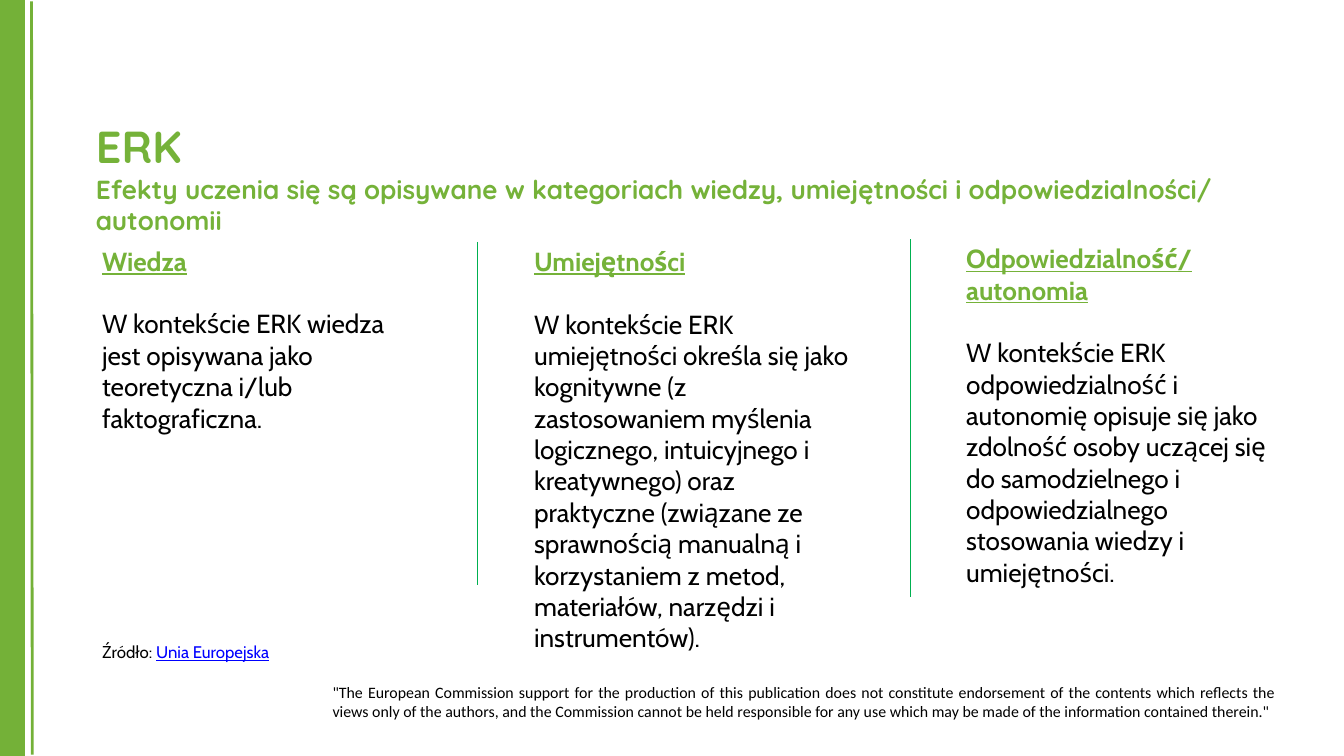
from lxml.etree import SubElement
from pptx import Presentation
from pptx.dml.color import RGBColor
from pptx.enum.shapes import MSO_CONNECTOR as Connector, MSO_SHAPE as Shape
from pptx.enum.text import PP_ALIGN as Align
from pptx.oxml.ns import qn
from pptx.util import Inches, Pt

BAR_GREEN = RGBColor(0x74, 0xB1, 0x38)
TITLE_GREEN = RGBColor(0x75, 0xB2, 0x39)
DIVIDER_GREEN = RGBColor(0x00, 0xB0, 0x50)
LINK_BLUE = RGBColor(0x00, 0x00, 0xFF)
BLACK = RGBColor(0x00, 0x00, 0x00)

WIDTH, HEIGHT = 20, 11.25

# Column grid, in inches
FIRST_LEFT, PITCH, COLUMN_WIDTH = 1.42, 6.43, 4.96
DIVIDER_GAP = 0.74
TITLE_LEFT = 1.33
BLANK_LINE = Pt(33.5)

# Text formats
TITLE = {"name": "Quicksand", "size": Pt(48), "bold": True, "color": TITLE_GREEN}
SUBTITLE = {**TITLE, "size": Pt(28)}
BODY = {"name": "Cabin", "size": Pt(28), "color": BLACK}
HEADING = {**BODY, "bold": True, "underline": True, "color": TITLE_GREEN}
SOURCE = {**BODY, "size": Pt(18)}
LINK = {**SOURCE, "underline": True, "color": LINK_BLUE}
DISCLAIMER = {"name": "Calibri", "size": Pt(17), "color": BLACK}

# Heading, text, top, text height and divider height of each column
COLUMNS = [
    ("Wiedza",
     "W kontekście ERK wiedza jest opisywana jako teoretyczna i/lub faktograficzna.",
     3.6, 2.46, None),
    ("Umiejętności",
     "W kontekście ERK umiejętności określa się jako kognitywne (z zastosowaniem "
     "myślenia logicznego, intuicyjnego i kreatywnego) oraz praktyczne (związane ze "
     "sprawnością manualną i korzystaniem z metod, materiałów, narzędzi i instrumentów).",
     3.6, 5.28, 5.11),
    ("Odpowiedzialność/ autonomia",
     "W kontekście ERK odpowiedzialność i autonomię opisuje się jako zdolność osoby "
     "uczącej się do samodzielnego i odpowiedzialnego stosowania wiedzy i umiejętności.",
     3.56, 5.28, 5.33),
]


def add_run(paragraph, text, style):
    run = paragraph.add_run()
    run.text = text
    for attribute, value in style.items():
        if attribute == "color":
            run.font.color.rgb = value
        else:
            setattr(run.font, attribute, value)


def add_text(slide, box, *paragraphs, align=Align.LEFT):
    """Each paragraph is a list of (text, format) runs."""
    frame = slide.shapes.add_textbox(*map(Inches, box)).text_frame
    frame.word_wrap = True
    for index, runs in enumerate(paragraphs):
        paragraph = frame.add_paragraph() if index else frame.paragraphs[0]
        paragraph.alignment = align
        if index:
            paragraph.space_before = BLANK_LINE
        for text, style in runs:
            add_run(paragraph, text, style)


def add_line(slide, start, end, color, width):
    line = slide.shapes.add_connector(Connector.STRAIGHT, *map(Inches, start + end))
    line.line.color.rgb = color
    line.line.width = Pt(width)
    SubElement(line._element.spPr, qn("a:effectLst"))


def add_side_band(slide):
    band = slide.shapes.add_shape(Shape.RECTANGLE, 0, 0, Inches(0.37), Inches(HEIGHT))
    band.shadow.inherit = False
    band.fill.solid()
    band.fill.fore_color.rgb = BAR_GREEN
    band.line.fill.background()
    add_line(slide, (0.47, 0.02), (0.48, HEIGHT - 0.02), BAR_GREEN, 3)


def add_column(slide, index, heading, text, top, height, divider_height):
    left = FIRST_LEFT + index * PITCH
    add_text(slide, (left, top, COLUMN_WIDTH, height),
             [(heading, HEADING)], [(text, BODY)])
    if divider_height:
        x = left - DIVIDER_GAP
        add_line(slide, (x, top), (x, top + divider_height), DIVIDER_GREEN, 0.75)


def main():
    deck = Presentation()
    deck.slide_width, deck.slide_height = Inches(WIDTH), Inches(HEIGHT)
    slide = deck.slides.add_slide(deck.slide_layouts[6])

    # Side band and disclaimer
    add_side_band(slide)
    add_text(slide, (4.85, 10.11, 14.23, 0.67), [(
        '"The European Commission support for the production of this publication does '
        "not constitute endorsement of the contents which reflects the views only of "
        "the authors, and the Commission cannot be held responsible for any use which "
        'may be made of the information contained therein."', DISCLAIMER)],
        align=Align.JUSTIFY)

    # Title and subtitle
    add_text(slide, (TITLE_LEFT, 1.71, 18.33, 0.91), [("ERK", TITLE)])
    add_text(slide, (TITLE_LEFT, 2.53, 17.83, 1.04), [(
        "Efekty uczenia się są opisywane w kategoriach wiedzy, umiejętności "
        "i odpowiedzialności/ autonomii", SUBTITLE)])

    # Three categories with dividers between them
    for index, column in enumerate(COLUMNS):
        add_column(slide, index, *column)

    # Source
    add_text(slide, (FIRST_LEFT, 9.5, 6.6, 0.4),
             [("Źródło: ", SOURCE), ("Unia Europejska", LINK)])

    deck.save("out.pptx")


if __name__ == "__main__":
    main()
